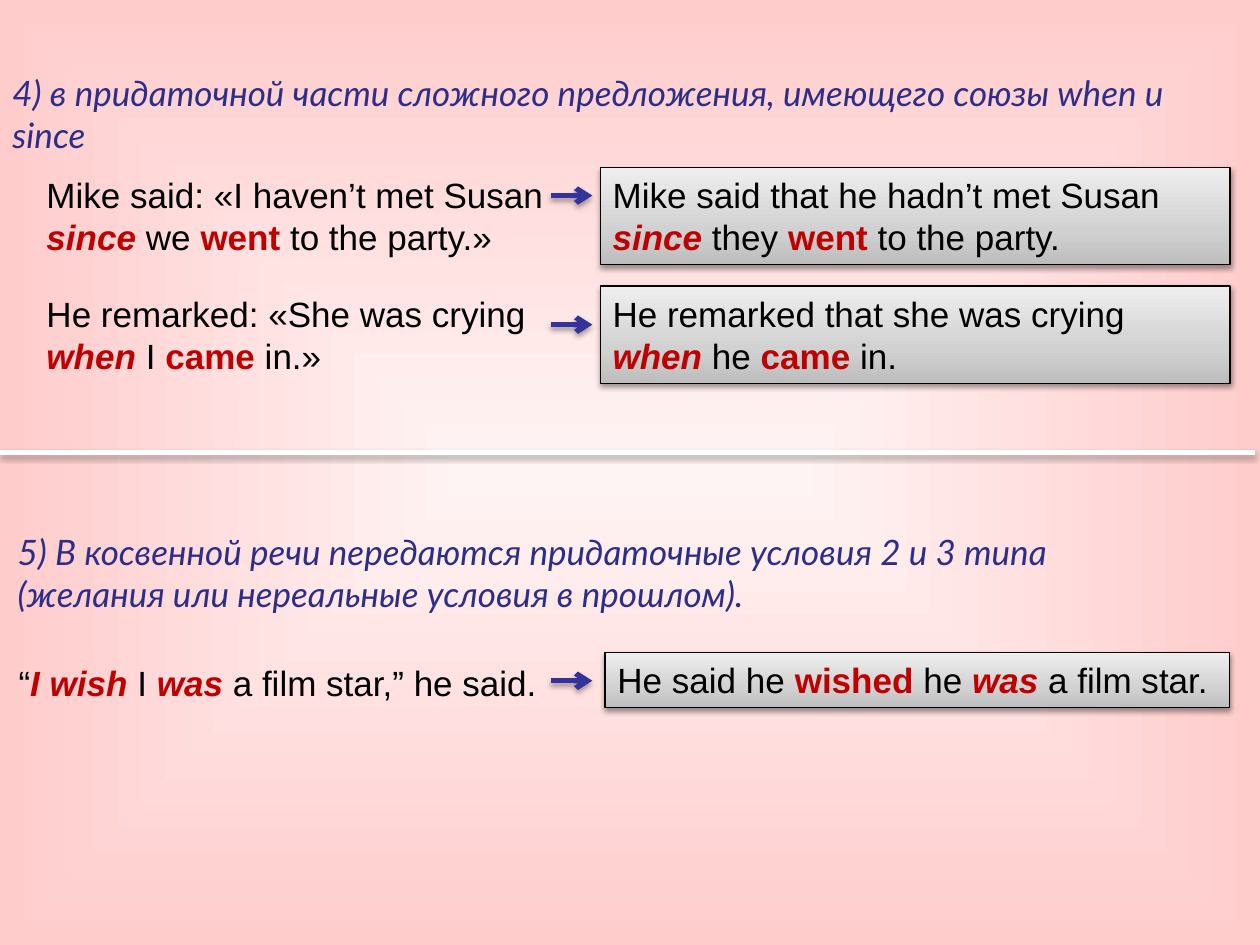
"""Builds a grammar slide on reported speech with example pairs."""
from dataclasses import dataclass

from lxml import etree
from pptx import Presentation
from pptx.dml.color import RGBColor
from pptx.enum.shapes import MSO_CONNECTOR, MSO_SHAPE
from pptx.enum.text import MSO_ANCHOR, MSO_AUTO_SIZE, PP_ALIGN
from pptx.oxml import parse_xml
from pptx.oxml.ns import nsdecls, qn
from pptx.util import Pt

STRAIGHT = MSO_CONNECTOR.STRAIGHT
RECT = MSO_SHAPE.RECTANGLE
TOP, LEFT = MSO_ANCHOR.TOP, PP_ALIGN.LEFT
FIT = MSO_AUTO_SIZE.SHAPE_TO_FIT_TEXT


@dataclass(frozen=True)
class Theme:
    """Colours, fonts and sizes of the slide."""
    heading: str = "2D2D8A"
    text: str = "000000"
    accent: str = "C00000"
    arrow: str = "333399"
    divider: str = "FFFFFF"
    page: tuple = ((0, "FFF4F4"), (100, "FFCCCC"))
    box: tuple = ((0, "BDBDBD"), (35, "D1D1D1"), (100, "EEEEEE"))
    heading_font: str = "Lato"
    body_font: str = "Arial"
    size: int = 20


THEME = Theme()
UPWARD = '<a:lin ang="16200000" scaled="0"/>'
FROM_CENTRE = ('<a:path path="shape"><a:fillToRect l="50000" t="50000" '
               'r="50000" b="50000"/></a:path>')

HEADINGS = [
    (0, 37.5, 677.5, "4) в придаточной части сложного предложения, "
                     "имеющего союзы when и since"),
    (3, 299.5, 686, "5) В косвенной речи передаются придаточные условия "
                    "2 и 3 типа (желания или нереальные условия в прошлом)."),
]
DIRECT = [
    (19.5, 95.75, 323.5, 55.5,
     [("Mike said: «I haven’t met Susan ", ""), ("since", "bi"),
      (" we ", ""), ("went", "b"), (" to the party.»", "")]),
    (19.5, 163.5, 323.5, 55.5,
     [("He remarked: «She was crying ", ""), ("when", "bi"),
      (" I ", ""), ("came", "b"), (" in.»", "")]),
    (3.5, 374.5, 373, 31.5,
     [("“", ""), ("I wish ", "bi"), ("I ", ""), ("was", "bi"),
      (" a film star,” he said.", "")]),
]
REPORTED = [
    (343, 95.75, 360, 55.5,
     [("Mike said that he hadn’t met Susan ", ""), ("since", "bi"),
      (" they ", ""), ("went", "b"), (" to the party.", "")]),
    (343, 163.5, 360, 55.5,
     [("He remarked that she was crying ", ""), ("when", "bi"),
      (" he ", ""), ("came", "b"), (" in.", "")]),
    (345.75, 373, 357, 31.5,
     [("He said he ", ""), ("wished", "b"), (" he ", ""), ("was", "bi"),
      (" a film star.", "")]),
]
ARROW_YS = (111.75, 185.5, 389)


def set_gradient(fill, element, stops, direction):
    """Give the fill inside element the stops and direction."""
    fill.gradient()
    old = next(element.iter(qn("a:gradFill")))
    gs = "".join(f'<a:gs pos="{pos * 1000}"><a:srgbClr val="{color}"/></a:gs>'
                 for pos, color in stops)
    old.getparent().replace(old, parse_xml(
        f'<a:gradFill {nsdecls("a")} rotWithShape="1">'
        f'<a:gsLst>{gs}</a:gsLst>{direction}</a:gradFill>'))


def add_shadow(sp, alpha, dist):
    """Add a soft shadow falling straight down."""
    sp._element.spPr.append(parse_xml(
        f'<a:effectLst {nsdecls("a")}><a:outerShdw blurRad="{Pt(3.1)}" '
        f'dist="{Pt(dist)}" dir="5400000" rotWithShape="0">'
        f'<a:srgbClr val="000000"><a:alpha val="{alpha * 1000}"/></a:srgbClr>'
        '</a:outerShdw></a:effectLst>'))


def write_runs(sp, runs, font, color):
    """Write styled runs, with bold ones in the accent colour."""
    tf = sp.text_frame
    tf.word_wrap = True
    tf.auto_size = FIT
    tf.vertical_anchor = TOP
    p = tf.paragraphs[0]
    p.alignment = LEFT
    for text, style in runs:
        r = p.add_run()
        r.text = text
        r.font.name = font
        r.font.size = Pt(THEME.size)
        r.font.bold = "b" in style
        r.font.italic = "i" in style
        r.font.color.rgb = RGBColor.from_string(
            THEME.accent if "b" in style else color)


def add_text(s, x, y, w, h, runs, font=THEME.body_font, color=THEME.text):
    """Add a plain text box."""
    sp = s.shapes.add_textbox(Pt(x), Pt(y), Pt(w), Pt(h))
    write_runs(sp, runs, font, color)


def add_box(s, x, y, w, h, runs):
    """Add a shaded box holding a reported sentence."""
    sp = s.shapes.add_shape(RECT, Pt(x), Pt(y), Pt(w), Pt(h))
    set_gradient(sp.fill, sp._element, THEME.box, UPWARD)
    sp.line.color.rgb = RGBColor.from_string(THEME.text)
    sp.line.width = Pt(0.75)
    add_shadow(sp, 38, 1.6)
    write_runs(sp, runs, THEME.body_font, THEME.text)


def add_line(s, x1, x2, y, color, arrow=False):
    """Add a horizontal line, with an arrowhead if asked."""
    sp = s.shapes.add_connector(STRAIGHT, Pt(x1), Pt(y), Pt(x2), Pt(y))
    sp.line.color.rgb = RGBColor.from_string(color)
    sp.line.width = Pt(3)
    if arrow:
        etree.SubElement(sp.line._get_or_add_ln(), qn("a:tailEnd"), type="arrow")
    add_shadow(sp, 35, 1.8)


def main():
    """Build and save the slide."""
    prs = Presentation()
    prs.slide_width, prs.slide_height = Pt(720), Pt(540)
    s = prs.slides.add_slide(prs.slide_layouts[6])
    set_gradient(s.background.fill, s._element, THEME.page, FROM_CENTRE)
    for x, y, w, text in HEADINGS:
        add_text(s, x, y, w, 55.5, [(text, "i")],
                 THEME.heading_font, THEME.heading)
    for direct, reported, y in zip(DIRECT, REPORTED, ARROW_YS):
        add_text(s, *direct)
        add_box(s, *reported)
        add_line(s, 314.75, 338.5, y, THEME.arrow, arrow=True)
    add_line(s, 0, 717, 258.5, THEME.divider)
    prs.save("out.pptx")


if __name__ == "__main__":
    main()
